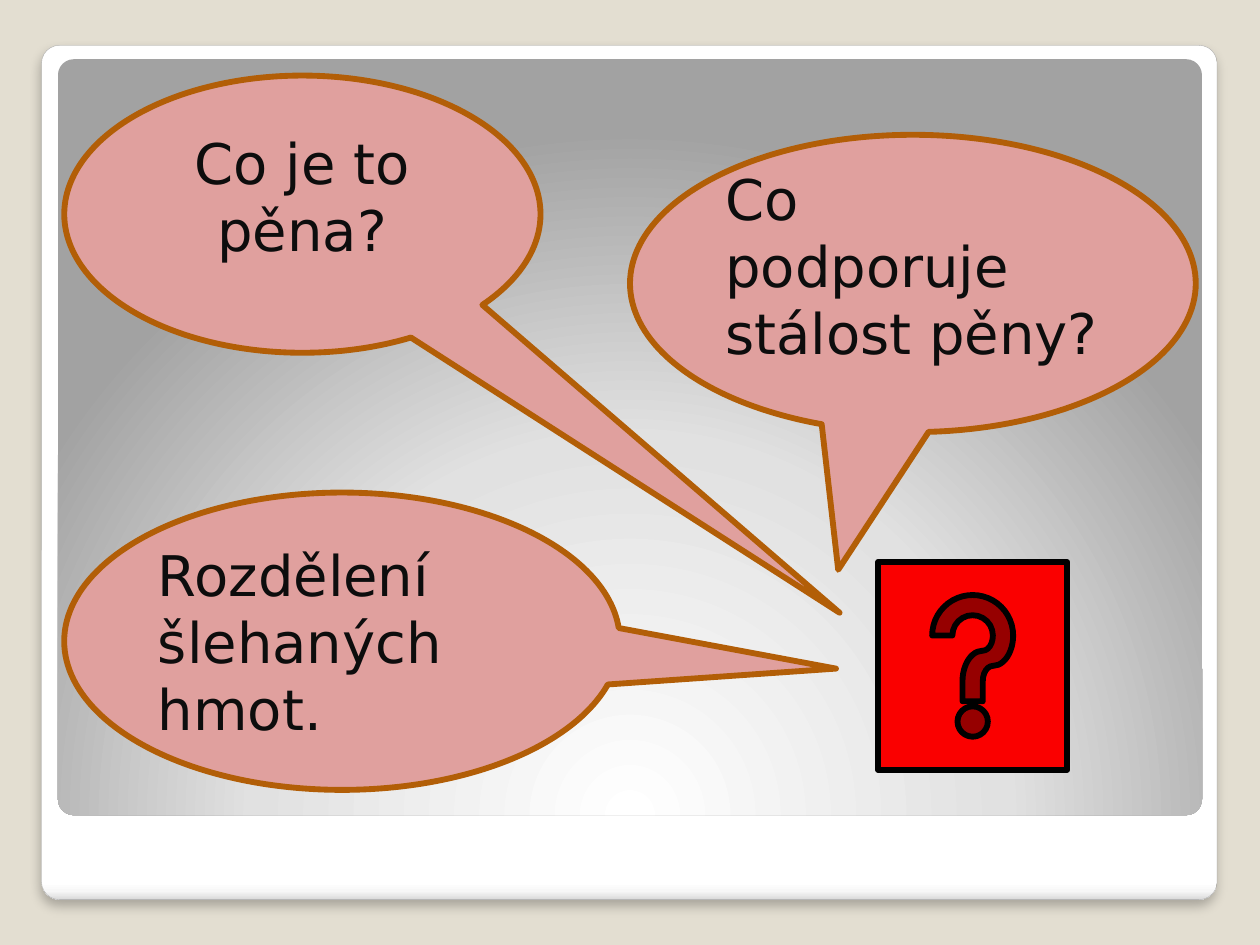
"""Build a slide with three speech bubbles asking about foam around a help button."""
from lxml import etree
from pptx import Presentation
from pptx import util as u
from pptx.dml.color import RGBColor
from pptx.enum import shapes, text
from pptx.oxml import ns

SAND = RGBColor(0xE3, 0xDE, 0xD1)
GREY = RGBColor(0xA4, 0xA4, 0xA4)
ROSE = RGBColor(0xE0, 0xA0, 0x9E)
BROWN = RGBColor(0xB2, 0x5E, 0x07)
RED = RGBColor(0xFA, 0x00, 0x00)
BLACK = RGBColor(0x00, 0x00, 0x00)
INK = RGBColor(0x0D, 0x0D, 0x0D)
CARD_STOPS = [(0, "FFFFFF"), (98, "FFFFFF"), (99, "F7F7F7"), (100, "DADADA")]
PANEL_STOPS = [(0, "FFFFFF"), (55, "E1E1E1"), (100, "A2A2A2")]


def add(parent, tag, **attributes):
    return etree.SubElement(parent, ns.qn(tag), {k: str(v) for k, v in attributes.items()})


def write(shape, wording, size=32, font="DejaVu Sans", color=INK,
          align=text.PP_ALIGN.LEFT, bottom=0.05):
    frame = shape.text_frame
    frame.word_wrap = True
    frame.vertical_anchor = text.MSO_ANCHOR.MIDDLE
    frame.margin_bottom = u.Inches(bottom)
    paragraph = frame.paragraphs[0]
    paragraph.alignment = align
    run = paragraph.add_run()
    run.text = wording
    run.font.size, run.font.name = u.Pt(size), font
    run.font.color.rgb = color


class Slide:
    outline = 3.35
    corner = 0.021

    def __init__(self, deck):
        self.slide = deck.slides.add_slide(deck.slide_layouts[6])
        self.slide.background.fill.solid()
        self.slide.background.fill.fore_color.rgb = SAND

    def shape(self, kind, box, fill=None, line=None, width=outline, adjust=()):
        shape = self.slide.shapes.add_shape(kind, *map(u.Inches, box))
        shape.shadow.inherit = False
        for index, value in enumerate(adjust):
            shape.adjustments[index] = value
        if fill is not None:
            shape.fill.solid()
            shape.fill.fore_color.rgb = fill
        if line is None:
            shape.line.fill.background()
        else:
            shape.line.color.rgb = line
            shape.line.width = u.Pt(width)
        return shape

    def rounded(self, box, stops, line=None, center=None):
        shape = self.shape(shapes.MSO_SHAPE.ROUNDED_RECTANGLE, box, line=line,
                           width=0.16, adjust=[self.corner])
        shape.fill.gradient()
        gradient = shape._element.spPr.find(ns.qn("a:gradFill"))
        for child in list(gradient):
            gradient.remove(child)
        stop_list = add(gradient, "a:gsLst")
        for position, color in stops:
            add(add(stop_list, "a:gs", pos=position * 1000), "a:srgbClr", val=color)
        if center:
            circle = add(gradient, "a:path", path="circle")
            add(circle, "a:fillToRect", **{k: v * 1000 for k, v in zip("ltrb", center)})
        else:
            add(gradient, "a:lin", ang=90 * 60000, scaled=0)
        return shape

    def drop_shadow(self, shape, blur=6, distance=4, opacity=25):
        effects = shape._element.spPr.find(ns.qn("a:effectLst"))
        shadow = add(effects, "a:outerShdw", blurRad=u.Pt(blur), dist=u.Pt(distance),
                     dir=90 * 60000, algn="t", rotWithShape=0)
        add(add(shadow, "a:srgbClr", val=BLACK), "a:alpha", val=opacity * 1000)

    def bubble(self, wording, box, tip, **style):
        shape = self.shape(shapes.MSO_SHAPE.OVAL_CALLOUT, box, ROSE, BROWN, adjust=tip)
        write(shape, wording, **style)

    def help_button(self, box):
        self.shape(shapes.MSO_SHAPE.ACTION_BUTTON_HELP, box, RED, BLACK)


def main():
    deck = Presentation()
    deck.slide_width, deck.slide_height = u.Inches(10), u.Inches(7.5)
    page = Slide(deck)
    card = page.rounded((0.33, 0.36, 9.33, 6.78), CARD_STOPS, line=GREY)
    page.drop_shadow(card)
    page.rounded((0.46, 0.47, 9.08, 6), PANEL_STOPS, center=(50, 175, 50, -75))
    page.bubble("Co podporuje stálost pěny?", (5, 1.07, 4.49, 2.36), (-0.132, 0.963),
                bottom=0.34)
    page.bubble("Co je to pěna?", (0.51, 0.6, 3.78, 2.2), (1.128, 1.438),
                align=text.PP_ALIGN.CENTER, bottom=0.34)
    page.bubble("Rozdělení šlehaných hmot.", (0.51, 3.91, 4.41, 2.36), (0.889, 0.092))
    page.help_button((6.97, 4.46, 1.5, 1.65))
    deck.save("out.pptx")


if __name__ == "__main__":
    main()
